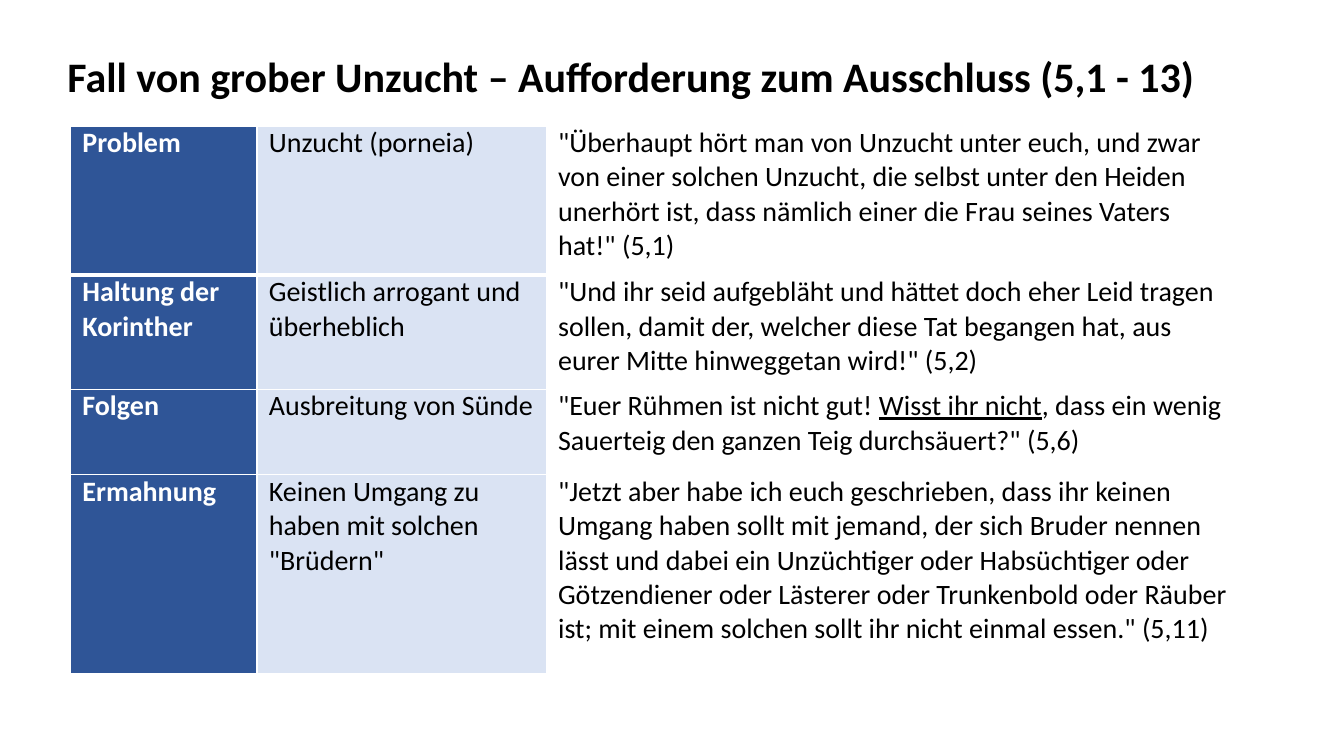
import pptx
import pptx.dml.color
import pptx.enum.text
import pptx.oxml
import pptx.oxml.ns
import pptx.util

Pt = pptx.util.Pt

ROWS = [
    ('Problem', 'Unzucht (porneia)',
     '"Überhaupt hört man von Unzucht unter euch, und zwar von einer solchen Unzucht, '
     'die selbst unter den Heiden unerhört ist, dass nämlich einer die Frau seines Vaters '
     'hat!" (5,1)'),
    ('Haltung der Korinther', 'Geistlich arrogant und\nüberheblich',
     '"Und ihr seid aufgebläht und hättet doch eher Leid tragen sollen, damit der, welcher '
     'diese Tat begangen hat, aus eurer Mitte hinweggetan wird!" (5,2)'),
    ('Folgen', 'Ausbreitung von Sünde',
     '"Euer Rühmen ist nicht gut! _Wisst ihr nicht_, dass ein wenig Sauerteig den ganzen '
     'Teig durchsäuert?" (5,6)'),
    ('Ermahnung', 'Keinen Umgang zu haben mit solchen "Brüdern"',
     '"Jetzt aber habe ich euch geschrieben, dass ihr keinen Umgang haben sollt mit jemand, '
     'der sich Bruder nennen lässt und dabei ein Unzüchtiger oder Habsüchtiger oder '
     'Götzendiener oder Lästerer oder Trunkenbold oder Räuber ist; mit einem solchen sollt '
     'ihr nicht einmal essen." (5,11)'),
]
COL_WIDTHS = [133.2, 206.6, 498.6]
ROW_HEIGHTS = [106.6, 81.4, 61.2, 141.8]
# Fill, text colour and bold of each column
COL_STYLES = [('2F5597', 'FFFFFF', True), ('DAE3F3', '000000', False),
              ('FFFFFF', '000000', False)]


def rgb(value):
    return pptx.dml.color.RGBColor.from_string(value)


def write(tf, text, size=20, color='000000', bold=False, font='Calibri'):
    """Fill a text frame: newlines split paragraphs, underscores enclose underlined words."""
    for i, line in enumerate(text.split('\n')):
        p = tf.add_paragraph() if i else tf.paragraphs[0]
        p.alignment = pptx.enum.text.PP_ALIGN.LEFT
        p.line_spacing = 1.0
        p.space_before = p.space_after = Pt(0)
        for j, part in enumerate(line.split('_')):
            r = p.add_run()
            r.text = part
            r.font.name, r.font.size, r.font.bold = font, Pt(size), bold
            r.font.color.rgb = rgb(color)
            if j % 2:
                r.font.underline = True


class Deck:
    def __init__(self, width, height):
        self.prs = pptx.Presentation()
        self.prs.slide_width, self.prs.slide_height = Pt(width), Pt(height)
        self.line_color = 'FFFFFF'
        self.s = self.prs.slides.add_slide(self.prs.slide_layouts[5])

    def title(self, text, left, top, width, height):
        sp = self.s.shapes.title
        sp.left, sp.top, sp.width, sp.height = map(Pt, (left, top, width, height))
        tf = sp.text_frame
        tf.word_wrap = True
        tf.auto_size = pptx.enum.text.MSO_AUTO_SIZE.NONE
        tf.vertical_anchor = pptx.enum.text.MSO_ANCHOR.MIDDLE
        write(tf, text, size=30, bold=True)

    def borders(self, cell, **widths):
        """Set the cell's edges, given as L, R, T, B in that order."""
        tcPr = cell._tc.get_or_add_tcPr()
        for i, (side, width) in enumerate(widths.items()):
            tcPr.insert(i, pptx.oxml.parse_xml(
                f'<a:ln{side} {pptx.oxml.ns.nsdecls("a")} w="{Pt(width)}"><a:solidFill>'
                f'<a:srgbClr val="{self.line_color}"/></a:solidFill></a:ln{side}>'))

    def table(self, rows, left, top):
        table = self.s.shapes.add_table(
            len(rows), len(COL_WIDTHS), Pt(left), Pt(top),
            Pt(sum(COL_WIDTHS)), Pt(sum(ROW_HEIGHTS))).table
        table.first_row = table.horz_banding = False
        for col, width in zip(table.columns, COL_WIDTHS):
            col.width = Pt(width)
        for i, (row, height) in enumerate(zip(rows, ROW_HEIGHTS)):
            table.rows[i].height = Pt(height)
            for j, (text, (fill, color, bold)) in enumerate(zip(row, COL_STYLES)):
                cell = table.cell(i, j)
                cell.margin_left = cell.margin_right = Pt(8.5)
                cell.margin_top = cell.margin_bottom = Pt(0)
                cell.fill.solid()
                cell.fill.fore_color.rgb = rgb(fill)
                write(cell.text_frame, text, color=color, bold=bold)
                self.borders(cell, L=1, R=1, T=3 if i == 1 else 1, B=3 if i == 0 else 1)


def main():
    deck = Deck(960, 540)
    deck.title('Fall von grober Unzucht – Aufforderung zum Ausschluss (5,1 - 13)',
               41, 32.4, 839, 44)
    deck.table(ROWS, 50.4, 90)
    deck.prs.save("out.pptx")


if __name__ == "__main__":
    main()
